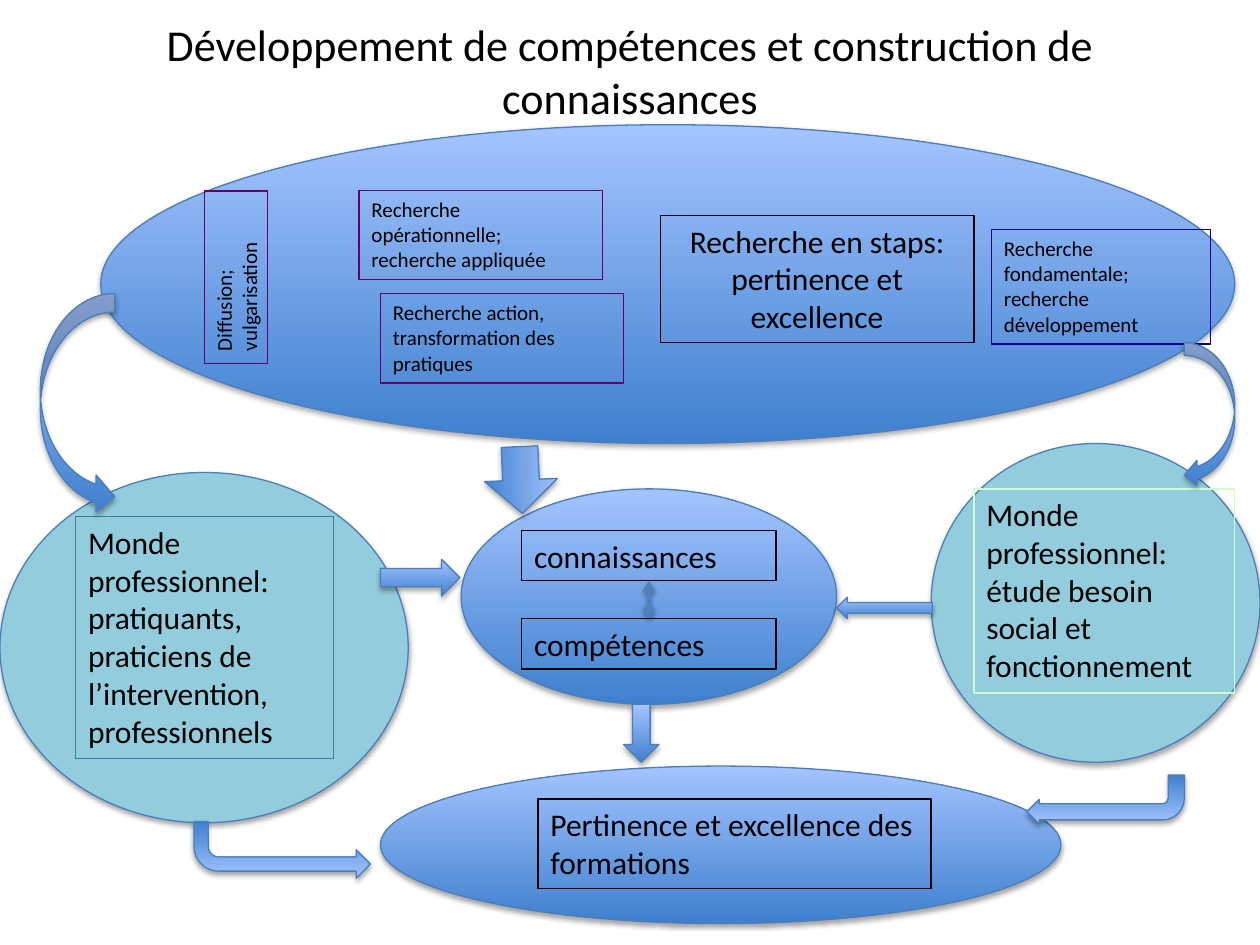
from dataclasses import dataclass

from lxml import etree
from pptx import Presentation
from pptx.dml.color import RGBColor
from pptx.enum.shapes import MSO_CONNECTOR, MSO_SHAPE
from pptx.enum.text import MSO_ANCHOR, MSO_AUTO_SIZE, PP_ALIGN
from pptx.oxml.ns import qn
from pptx.util import Inches, Pt

LEFT, CENTER = PP_ALIGN.LEFT, PP_ALIGN.CENTER
MIDDLE = MSO_ANCHOR.MIDDLE
NO_FIT, GROW = MSO_AUTO_SIZE.NONE, MSO_AUTO_SIZE.SHAPE_TO_FIT_TEXT
STRAIGHT = MSO_CONNECTOR.STRAIGHT
ELLIPSE = MSO_SHAPE.OVAL
RIGHT_ARROW, LEFT_ARROW = MSO_SHAPE.RIGHT_ARROW, MSO_SHAPE.LEFT_ARROW
DOWN_ARROW, BENT_ARROW = MSO_SHAPE.DOWN_ARROW, MSO_SHAPE.BENT_ARROW
CURVED_RIGHT = MSO_SHAPE.CURVED_RIGHT_ARROW
CURVED_LEFT = MSO_SHAPE.CURVED_LEFT_ARROW
TITLE_ONLY = 5
TOP_SITE, BOTTOM_SITE = 0, 2
COLUMNS, ROWS = 100, 75
WIDTH, HEIGHT = Inches(10), Inches(7.5)


@dataclass(frozen=True)
class Theme:
    font: str = "Calibri"
    title_size: float = 25.2
    large: float = 18
    small: float = 12
    text: str = "000000"
    gradient: tuple = ("3F80CE", "A4C4FF")
    world: str = "93CDDD"
    outline: str = "4B7EBC"
    link: str = "4F81BD"
    navy: str = "000090"
    purple: str = "660066"
    mint: str = "CCFFCC"
    teal: str = "31859C"
    thin: float = 0.75
    thick: float = 2


THEME = Theme()


def grid(left, top, width, height):
    """Turn columns and rows of the slide grid into lengths."""
    column, row = WIDTH / COLUMNS, HEIGHT / ROWS
    return (round(left * column), round(top * row),
            round(width * column), round(height * row))


def set_line(line, color, width=THEME.thin):
    line.color.rgb = RGBColor.from_string(color)
    line.width = Pt(width)


def add_shadow(element, opacity, distance):
    """Drop a soft black shadow straight down; distance is in points."""
    effects = etree.SubElement(element.spPr, qn("a:effectLst"))
    shadow = etree.SubElement(
        effects, qn("a:outerShdw"), blurRad=str(Pt(3.1)),
        dist=str(Pt(distance)), dir="5400000", rotWithShape="0")
    color = etree.SubElement(shadow, qn("a:srgbClr"), val="000000")
    etree.SubElement(color, qn("a:alpha"), val=str(opacity * 1000))


def write_text(frame, *lines, size=THEME.large, align=LEFT, fit=GROW):
    frame.word_wrap = True
    frame.auto_size = fit
    for index, line in enumerate(lines):
        para = frame.add_paragraph() if index else frame.paragraphs[0]
        para.alignment = align
        span = para.add_run()
        span.text = line
        span.font.name = THEME.font
        span.font.size = Pt(size)
        span.font.color.rgb = RGBColor.from_string(THEME.text)


def add_title(page, text, cells):
    title = page.shapes.title
    title.left, title.top, title.width, title.height = grid(*cells)
    title.text_frame.vertical_anchor = MIDDLE
    write_text(title.text_frame, text, size=THEME.title_size,
               align=CENTER, fit=NO_FIT)


def add_figure(page, kind, cells, fill=None, rotation=0, flip=False,
               adjustments=()):
    """Add a shadowed shape, with the blue gradient unless fill is given."""
    figure = page.shapes.add_shape(kind, *grid(*cells))
    figure.rotation = rotation
    for index, value in enumerate(adjustments):
        figure.adjustments[index] = value
    if flip:
        figure.element.spPr.find(qn("a:xfrm")).set("flipV", "1")
    if fill:
        figure.fill.solid()
        figure.fill.fore_color.rgb = RGBColor.from_string(fill)
    else:
        figure.fill.gradient()
        figure.fill.gradient_angle = 90
        for stop, color in zip(figure.fill.gradient_stops, THEME.gradient):
            stop.color.rgb = RGBColor.from_string(color)
    set_line(figure.line, THEME.outline)
    add_shadow(figure.element, 35, 1.8)


def add_label(page, cells, *lines, border=THEME.text, rotation=0, **style):
    box = page.shapes.add_textbox(*grid(*cells))
    box.rotation = rotation
    set_line(box.line, border)
    write_text(box.text_frame, *lines, **style)
    return box


def add_link(page, upper, lower):
    """Join two stacked boxes with a double-headed arrow."""
    link = page.shapes.add_connector(STRAIGHT, 0, 0, 0, 0)
    link.begin_connect(upper, BOTTOM_SITE)
    link.end_connect(lower, TOP_SITE)
    set_line(link.line, THEME.link, THEME.thick)
    line = link.element.spPr.find(qn("a:ln"))
    for end in ("a:headEnd", "a:tailEnd"):
        etree.SubElement(line, qn(end), type="arrow")
    add_shadow(link.element, 38, 1.6)


def add_ellipses(page):
    for cells in ((0, 37.5, 32.4, 27.8), (73.9, 35.2, 26.1, 25.3)):
        add_figure(page, ELLIPSE, cells, fill=THEME.world)
    for cells in ((30.2, 60.8, 54, 12.5), (8, 9.9, 90, 25.3),
                  (36.6, 38.8, 29.8, 17.1)):
        add_figure(page, ELLIPSE, cells)


def add_research_labels(page):
    add_label(page, (52.4, 17.1, 24.9, 10.1),
              "Recherche en staps: pertinence et excellence", align=CENTER)
    for cells, text, border, rotation in (
        ((78.7, 18.2, 17.4, 9.1),
         "Recherche fondamentale; recherche développement", THEME.navy, 0),
        ((28.5, 15.1, 19.3, 7.1),
         "Recherche opérationnelle; recherche appliquée", THEME.purple, 0),
        ((30.2, 23.3, 19.3, 7.1),
         "Recherche action, transformation des pratiques", THEME.purple, 0),
        ((11.9, 19.5, 13.7, 5), "Diffusion; vulgarisation",
         THEME.purple, 270),
    ):
        add_label(page, cells, text, border=border, rotation=rotation,
                  size=THEME.small)


def add_training_labels(page):
    knowledge, skills = (
        add_label(page, (41.4, top, 20.2, 4), text)
        for top, text in ((42.1, "connaissances"), (49.1, "compétences")))
    add_link(page, knowledge, skills)
    add_label(page, (42.7, 63.4, 31.2, 7.1),
              "Pertinence et excellence des formations")


def add_world_labels(page):
    add_label(page, (77.3, 38.8, 20.7, 16.2),
              "Monde professionnel: étude besoin social et fonctionnement",
              border=THEME.mint)
    add_label(page, (6, 41, 20.5, 19.2),
              "Monde professionnel: pratiquants, praticiens de l’intervention,",
              "professionnels", border=THEME.teal)


def add_arrows(page):
    for kind, cells, options in (
        (RIGHT_ARROW, (30.2, 44.4, 6.3, 2.9), {}),
        (RIGHT_ARROW, (38.7, 35.2, 5.3, 5.8), {"rotation": 87.4}),
        (DOWN_ARROW, (49.5, 55.9, 2.8, 4.6), {}),
        (CURVED_RIGHT, (3.2, 23.3, 5.9, 17.6), {}),
        (CURVED_LEFT, (94, 27.2, 4, 11.5), {}),
        (LEFT_ARROW, (66.4, 47.4, 7.6, 1.7), {}),
        (BENT_ARROW, (81.5, 61.5, 12.5, 3.9),
         {"rotation": 180, "adjustments": (0.33, 0.25, 0.25, 0.44)}),
        (BENT_ARROW, (15.4, 65.2, 14, 4.5), {"flip": True}),
    ):
        add_figure(page, kind, cells, **options)


def main():
    deck = Presentation()
    deck.slide_width, deck.slide_height = WIDTH, HEIGHT
    page = deck.slides.add_slide(deck.slide_layouts[TITLE_ONLY])
    add_ellipses(page)
    add_title(page, "Développement de compétences et construction de "
                    "connaissances", (6, 1.2, 88, 8.7))
    add_training_labels(page)
    add_research_labels(page)
    add_world_labels(page)
    add_arrows(page)
    deck.save("out.pptx")


if __name__ == "__main__":
    main()
